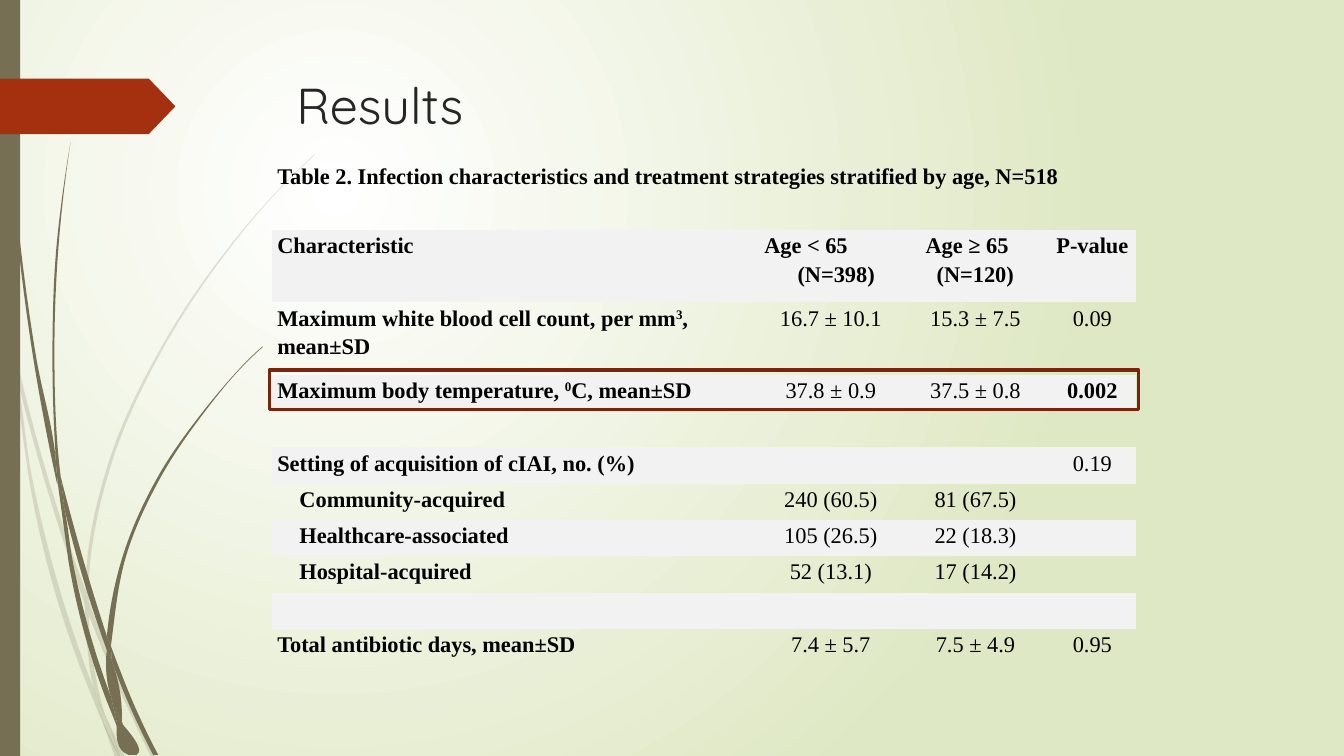
from typing import NamedTuple

from lxml import etree
from pptx import Presentation
from pptx.dml.color import RGBColor
from pptx.enum import shapes, text
from pptx.oxml import parse_xml
from pptx.oxml.ns import nsdecls, qn
from pptx.util import Inches, Pt

COLORS = {
    "glow": "FFFFFF", "meadow": "DFE8C4", "grass": "766F54", "ribbon": "A53010",
    "highlight": "7A240C", "title": "262626", "ink": "000000", "band": "F2F2F2",
}
TITLE_FONT, TABLE_FONT = "Quicksand", "Times New Roman"
NO_GRID_STYLE = "{2D5ABB26-0587-4C30-8999-92F81FD0307C}"
Point = tuple[float, float]


class Blade(NamedTuple):
    """A grass blade: two smooth edges, followed one after the other."""
    outward: list[Point]
    back: list[Point]


class Row(NamedTuple):
    """A table row; ^ encloses superscript in the label."""
    label: str = ""
    younger: str = ""
    older: str = ""
    p_value: str = ""
    height: float = 0.36
    indent: float = 0
    significant: bool = False


class Hanging(NamedTuple):
    first: float
    rest: float


PALE_GRASS = [
    Blade([(0.11, 3.5), (0.09, 3.22), (0, 2.82)], [(0, 2.99), (0.1, 3.44)]),
    Blade([(0.84, 5.99), (0.58, 5.22), (0.17, 3.76)], [(0.14, 3.45), (0.62, 5.2), (0.85, 5.86)]),
    Blade([(0.88, 5.96), (0.92, 6.07), (1.27, 6.92), (1.55, 7.51)],
          [(1.5, 7.51), (1.23, 6.94), (0.88, 6.1)]),
    Blade([(1.19, 7.51), (1.24, 7.51)], [(1.05, 7.11)]),
    Blade([(0.93, 6.83), (0.7, 6.19), (0.31, 4.69), (0.17, 3.76), (0.11, 3.5)],
          [(0.28, 4.7), (0.65, 6.21), (0.92, 6.93), (1.01, 7.14), (0.99, 7.07)]),
    Blade([(0.84, 5.99), (0.87, 6.46), (0.93, 6.83), (0.96, 6.92), (1.05, 7.11)],
          [(1.03, 7.06), (0.91, 6.46), (0.88, 6.1), (0.88, 6.08)]),
    Blade([(0.88, 5.96), (0.88, 5.84), (1.1, 4.62), (1.6, 3.49), (2.29, 2.45), (2.68, 1.98),
           (2.9, 1.75), (3.12, 1.54)],
          [(3.12, 1.53), (2.89, 1.75), (2.68, 1.97), (2.28, 2.44), (1.58, 3.48), (1.07, 4.61),
           (0.85, 5.84), (0.85, 5.86)]),
    Blade([(1.01, 7.14), (1.14, 7.51)], [(1.19, 7.51)]),
    Blade([(0.88, 6.08), (0.88, 5.96)], [(0.85, 5.86), (0.84, 5.99)]),
    Blade([(0.96, 6.92), (0.93, 6.83)], [(0.99, 7.07), (1.01, 7.14), (1.19, 7.51), (1.05, 7.11)]),
]
DARK_GRASS = [
    Blade([(0.04, 0), (0.05, 0.48), (0.08, 1.09), (0.19, 2.32), (0.36, 3.55), (0.55, 4.53),
           (0.57, 4.81)],
          [(0.56, 4.77), (0.33, 3.55), (0.17, 2.33), (0.07, 1.1), (0.04, 0.48), (0.03, 0)]),
    Blade([(0.6, 4.72), (0.93, 5.9), (1.06, 6.31)], [(1.06, 6.45), (0.88, 5.92), (0.64, 5.05)]),
    Blade([(1.1, 6.41), (1.13, 6.49), (1.36, 7.06), (1.57, 7.49)],
          [(1.52, 7.49), (1.32, 7.08), (1.11, 6.56)]),
    Blade([(1.1, 6.91), (0.98, 6.57), (0.72, 5.56), (0.64, 5.05), (0.57, 4.77)],
          [(0.68, 5.57), (0.93, 6.59), (1.11, 7.08), (1.17, 7.22), (1.16, 7.17)]),
    Blade([(0.6, 4.72), (0.58, 4.53), (0.54, 3.49), (0.58, 2.45), (0.63, 1.93), (0.7, 1.41)],
          [(0.7, 1.41), (0.62, 1.93), (0.56, 2.45), (0.52, 3.49), (0.55, 4.49)]),
    Blade([(1.33, 7.49), (1.36, 7.49)], [(1.22, 7.19)]),
    Blade([(0.57, 4.77), (0.64, 5.05)], [(0.6, 4.72), (0.55, 4.49), (0.55, 4.53)]),
    Blade([(1.1, 6.41), (1.11, 6.33), (1.25, 5.52), (1.58, 4.76), (2.05, 4.06), (2.31, 3.74),
           (2.45, 3.59), (2.61, 3.44)],
          [(2.6, 3.44), (2.45, 3.58), (2.31, 3.73), (2.04, 4.05), (1.56, 4.74), (1.22, 5.51),
           (1.06, 6.31)]),
    Blade([(1.17, 7.22), (1.27, 7.49)], [(1.31, 7.49)]),
    Blade([(1.06, 6.45), (1.1, 6.91), (1.16, 7.06), (1.22, 7.19)],
          [(1.21, 7.16), (1.11, 6.56), (1.09, 6.51)]),
    Blade([(1.06, 6.45), (1.09, 6.51), (1.11, 6.56)], [(1.1, 6.41), (1.06, 6.31)]),
    Blade([(1.16, 7.06), (1.1, 6.91)], [(1.16, 7.17), (1.3, 7.49), (1.33, 7.49), (1.22, 7.19)]),
]

CAPTION = "Table 2. Infection characteristics and treatment strategies stratified by age, N=518"
HEADER = Row("Characteristic", "Age < 65 (N=398)", "Age ≥ 65 (N=120)", "P-value", 0.72)
AGE_HEADINGS = {1: Hanging(0, 0.33), 2: Hanging(0.18, 0.29)}
ROWS = [
    Row(CAPTION, height=0.69),
    HEADER,
    Row("Maximum white blood cell count, per mm^3^, mean±SD",
        "16.7 ± 10.1", "15.3 ± 7.5", "0.09", 0.72),
    Row("Maximum body temperature, ^0^C, mean±SD",
        "37.8 ± 0.9", "37.5 ± 0.8", "0.002", significant=True),
    Row(),
    Row("Setting of acquisition of cIAI, no. (%)", p_value="0.19"),
    Row("Community-acquired", "240 (60.5)", "81 (67.5)", indent=0.22),
    Row("Healthcare-associated", "105 (26.5)", "22 (18.3)", indent=0.22),
    Row("Hospital-acquired", "52 (13.1)", "17 (14.2)", indent=0.22),
    Row(),
    Row("Total antibiotic days, mean±SD", "7.4 ± 5.7", "7.5 ± 4.9", "0.95"),
]
COLUMN_WIDTHS = [4.83, 1.42, 1.45, 0.87]


def rgb(name: str) -> RGBColor:
    return RGBColor.from_string(COLORS[name])


def paint(shape, color: str, opacity: int = 100) -> None:
    shape.shadow.inherit = False
    shape.line.fill.background()
    shape.fill.solid()
    shape.fill.fore_color.rgb = rgb(color)
    if opacity < 100:
        tint = next(shape._element.spPr.iter(qn("a:srgbClr")))
        etree.SubElement(tint, qn("a:alpha")).set("val", str(opacity * 1000))


def edge_handles(edge: list[Point]) -> list[list[complex]]:
    """Give the two Bézier handles of each piece of a smooth edge."""
    knots = [complex(*point) for point in edge]
    chords = [end - start for start, end in zip(knots, knots[1:])]
    slopes = [(a / abs(a) * abs(b) + b / abs(b) * abs(a)) / (abs(a) + abs(b))
              for a, b in zip(chords, chords[1:])]
    if slopes:
        first, last = (chords[i] / abs(chords[i]) * 2 - slopes[i] for i in (0, -1))
        slopes = [first, *slopes, last]
    else:
        slopes = [chord / abs(chord) for chord in chords] * 2
    return [[knots[i] + slopes[i] * abs(chord) / 3, knots[i + 1] - slopes[i + 1] * abs(chord) / 3]
            for i, chord in enumerate(chords)]


def draw_grass(slide, blades: list[Blade], opacity: int) -> None:
    clump = slide.shapes.add_group_shape()
    for blade in blades:
        outline = [(Inches(x), Inches(y)) for edge in blade for x, y in edge]
        builder = clump.shapes.build_freeform(*outline[0])
        builder.add_line_segments(outline[1:], close=True)
        leaf = builder.convert_to_shape()
        paint(leaf, "grass", opacity)
        handles = [*edge_handles(blade.outward), [], *edge_handles(blade.back)]
        for segment, pair in zip(list(leaf._element.iter(qn("a:lnTo"))), handles):
            if not pair:
                continue
            curve = etree.Element(qn("a:cubicBezTo"))
            for handle in pair:
                etree.SubElement(curve, qn("a:pt"), x=str(Inches(handle.real) - leaf.left),
                                 y=str(Inches(handle.imag) - leaf.top))
            curve.append(segment[0])
            segment.getparent().replace(segment, curve)


def set_background(slide) -> None:
    slide.background.fill.solid()
    solid = next(slide._element.iter(qn("a:solidFill")))
    stops = "".join(f'<a:gs pos="{pos}"><a:srgbClr val="{COLORS[name]}"/></a:gs>'
                    for pos, name in ((0, "glow"), (100000, "meadow")))
    solid.getparent().replace(solid, parse_xml(
        f'<a:gradFill {nsdecls("a")} rotWithShape="1"><a:gsLst>{stops}</a:gsLst><a:path path="circle">'
        '<a:fillToRect l="50000" t="50000" r="100000" b="100000"/></a:path></a:gradFill>'))


def fill_cell(cell, content: str, bold: bool, centred: bool, hanging: Hanging) -> None:
    cell.margin_left = cell.margin_right = Inches(0.05)
    cell.margin_top = cell.margin_bottom = 0
    paragraph = cell.text_frame.paragraphs[0]
    paragraph.line_spacing = 1.15
    paragraph.alignment = text.PP_ALIGN.CENTER if centred else text.PP_ALIGN.LEFT
    font = paragraph.font
    font.name, font.size, font.bold = TABLE_FONT, Pt(16), bold
    font.color.rgb = rgb("ink")
    properties = paragraph._p.get_or_add_pPr()
    properties.set("marL", str(Inches(hanging.rest)))
    properties.set("indent", str(Inches(hanging.first - hanging.rest)))
    for index, part in enumerate(content.split("^") if content else []):
        run = paragraph.add_run()
        run.text = part
        if index % 2:
            run.font._element.set("baseline", "30000")


def draw_table(slide) -> None:
    table = slide.shapes.add_table(len(ROWS), len(COLUMN_WIDTHS), Inches(2.7), Inches(1.59),
                                   Inches(sum(COLUMN_WIDTHS)),
                                   Inches(sum(row.height for row in ROWS))).table
    table.first_row = table.horz_banding = False
    table._tbl.tblPr.find(qn("a:tableStyleId")).text = NO_GRID_STYLE
    for column, width in zip(table.columns, COLUMN_WIDTHS):
        column.width = Inches(width)
    for r, row in enumerate(ROWS):
        table.rows[r].height = Inches(row.height)
        for c, content in enumerate(row[:4]):
            cell = table.cell(r, c)
            stepped = row is HEADER and c in AGE_HEADINGS
            indent = row.indent if c == 0 else 0
            hanging = AGE_HEADINGS[c] if stepped else Hanging(indent, indent)
            bold = c == 0 or row is HEADER or (c == 3 and row.significant)
            fill_cell(cell, content, bold, c > 0 and not stepped, hanging)
            if r % 2:
                cell.fill.solid()
                cell.fill.fore_color.rgb = rgb("band")
            else:
                cell.fill.background()
    table.cell(0, 0).merge(table.cell(0, 3))
    table.cell(0, 0).text_frame.paragraphs[0].space_after = Pt(8)


def add_box(slide, kind, left: float, top: float, width: float, height: float):
    return slide.shapes.add_shape(kind, Inches(left), Inches(top), Inches(width), Inches(height))


def main() -> None:
    deck = Presentation()
    deck.slide_width, deck.slide_height = Inches(13.33), Inches(7.5)
    slide = deck.slides.add_slide(deck.slide_layouts[6])
    set_background(slide)
    draw_grass(slide, PALE_GRASS, 20)
    draw_grass(slide, DARK_GRASS, 100)
    paint(add_box(slide, shapes.MSO_SHAPE.RECTANGLE, 0, 0, 0.2, 7.5), "grass")
    ribbon = add_box(slide, shapes.MSO_SHAPE.PENTAGON, 0, 0.78, 1.74, 0.55)
    ribbon.adjustments[0] = 0.48
    paint(ribbon, "ribbon")
    heading = slide.shapes.add_textbox(Inches(2.84), Inches(0.69), Inches(9.75), Inches(1.4))
    heading.text_frame.word_wrap = True
    results = heading.text_frame.paragraphs[0]
    results.text = "Results"
    results.font.name, results.font.size = TITLE_FONT, Pt(36)
    results.font.color.rgb = rgb("title")
    draw_table(slide)
    highlight = add_box(slide, shapes.MSO_SHAPE.RECTANGLE, 2.67, 3.67, 8.62, 0.39)
    highlight.shadow.inherit = False
    highlight.fill.background()
    highlight.line.color.rgb = rgb("highlight")
    highlight.line.width = Pt(2.25)
    deck.save("out.pptx")


if __name__ == "__main__":
    main()
